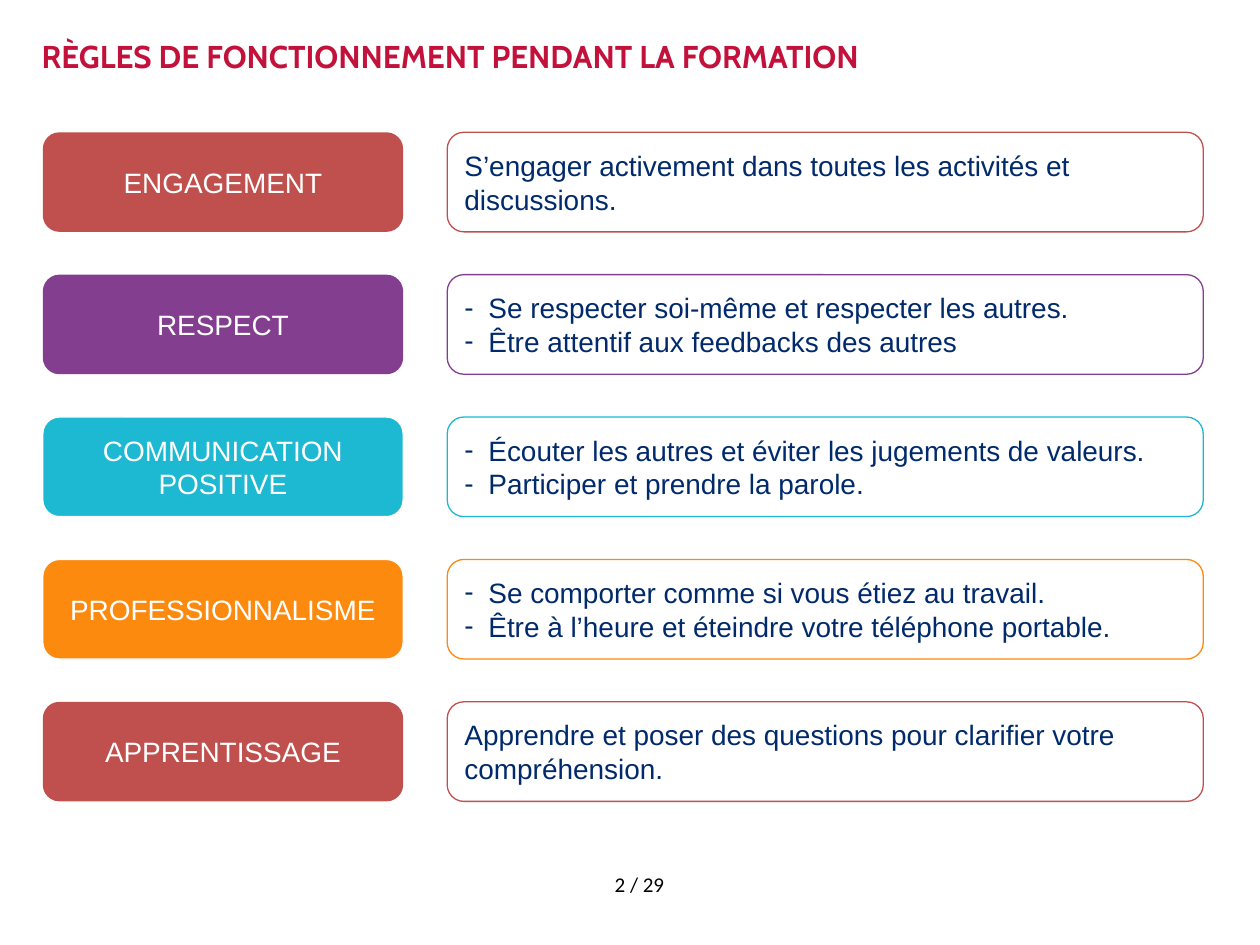
from lxml.etree import SubElement
from pptx import Presentation
from pptx.dml.color import RGBColor
from pptx.enum.shapes import MSO_SHAPE
from pptx.enum.text import MSO_ANCHOR, MSO_AUTO_SIZE, PP_ALIGN
from pptx.oxml.ns import qn
from pptx.util import Inches, Pt

# Content
TITLE = "RÈGLES DE FONCTIONNEMENT PENDANT LA FORMATION"
PAGE = "2 / 29"
COLORS = {
    "title": "C2113A", "body": "002A6C", "white": "FFFFFF", "black": "000000",
    "red": "C0504D", "purple": "833E90", "cyan": "1DB8D1", "orange": "FC8A0E",
}
# Heading, colour, heading outline, rules
RULES = [
    ("ENGAGEMENT", "red", None,
     ["S’engager activement dans toutes les activités et discussions."]),
    ("RESPECT", "purple", None,
     ["Se respecter soi-même et respecter les autres.",
      "Être attentif aux feedbacks des autres"]),
    ("COMMUNICATION POSITIVE", "cyan", "white",
     ["Écouter les autres et éviter les jugements de valeurs.",
      "Participer et prendre la parole."]),
    ("PROFESSIONNALISME", "orange", "white",
     ["Se comporter comme si vous étiez au travail.",
      "Être à l’heure et éteindre votre téléphone portable."]),
    ("APPRENTISSAGE", "red", None,
     ["Apprendre et poser des questions pour clarifier votre compréhension."]),
]

# Grid in inches
HEADING_LEFT, HEADING_WIDTH = 0.34, 2.86
RULE_LEFT, RULE_WIDTH = 3.55, 6
FIRST_TOP, ROW_HEIGHT, ROW_GAP = 1.05, 0.79, 0.34
INDENT = 0.19

# Text formats
FORMATS = {
    "title": {"name": "Cabin", "size": Pt(18), "bold": True},
    "box": {"name": "Arial", "size": Pt(16), "bold": False},
    "page": {"name": "Calibri", "size": Pt(12), "bold": False},
}


def rgb(color):
    return RGBColor.from_string(COLORS[color])


def write(frame, lines, style, color, align, bulleted=False):
    frame.word_wrap = True
    for i, line in enumerate(lines):
        paragraph = frame.paragraphs[0] if i == 0 else frame.add_paragraph()
        paragraph.text = line
        paragraph.alignment = align
        if bulleted:
            properties = paragraph._p.get_or_add_pPr()
            properties.set("marL", str(Inches(INDENT)))
            properties.set("indent", str(-Inches(INDENT)))
            SubElement(properties, qn("a:buFont"), typeface="Arial")
            SubElement(properties, qn("a:buChar"), char="-")
        font = paragraph.runs[0].font
        for attribute, value in FORMATS[style].items():
            setattr(font, attribute, value)
        font.color.rgb = rgb(color)


def add_box(left, top, width, fill, outline):
    box = slide.shapes.add_shape(
        MSO_SHAPE.ROUNDED_RECTANGLE,
        *(Inches(v) for v in (left, top, width, ROW_HEIGHT)))
    box.shadow.inherit = False
    if fill:
        box.fill.solid()
        box.fill.fore_color.rgb = rgb(fill)
    else:
        box.fill.background()
    if outline:
        box.line.color.rgb = rgb(outline)
        box.line.width = Pt(0.75)
    else:
        box.line.fill.background()
    box.text_frame.vertical_anchor = MSO_ANCHOR.MIDDLE
    return box.text_frame


presentation = Presentation()
presentation.slide_width, presentation.slide_height = Inches(10), Inches(7.5)
slide = presentation.slides.add_slide(presentation.slide_layouts[5])

# Title
title = slide.shapes.title
title.left, title.top, title.width, title.height = (
    Inches(v) for v in (0.33, 0.29, 9.33, 0.76))
title_frame = title.text_frame
title_format = {
    "margin_left": 0, "margin_top": 0, "margin_right": 0, "margin_bottom": 0,
    "vertical_anchor": MSO_ANCHOR.TOP, "auto_size": MSO_AUTO_SIZE.NONE,
}
for attribute, value in title_format.items():
    setattr(title_frame, attribute, value)
write(title_frame, [TITLE], "title", "title", PP_ALIGN.LEFT)

# One row per rule: heading on the left, details on the right
for row, (heading, color, outline, details) in enumerate(RULES):
    top = FIRST_TOP + row * (ROW_HEIGHT + ROW_GAP)
    heading_frame = add_box(HEADING_LEFT, top, HEADING_WIDTH, color, outline)
    write(heading_frame, [heading], "box", "white", PP_ALIGN.CENTER)
    details_frame = add_box(RULE_LEFT, top, RULE_WIDTH, None, color)
    write(details_frame, details, "box", "body", PP_ALIGN.LEFT,
          bulleted=len(details) > 1)

# Page number
page = slide.shapes.add_textbox(
    *(Inches(v) for v in (4.38, 6.87, 1.39, 0.31)))
write(page.text_frame, [PAGE], "page", "black", PP_ALIGN.CENTER)

presentation.save("out.pptx")
